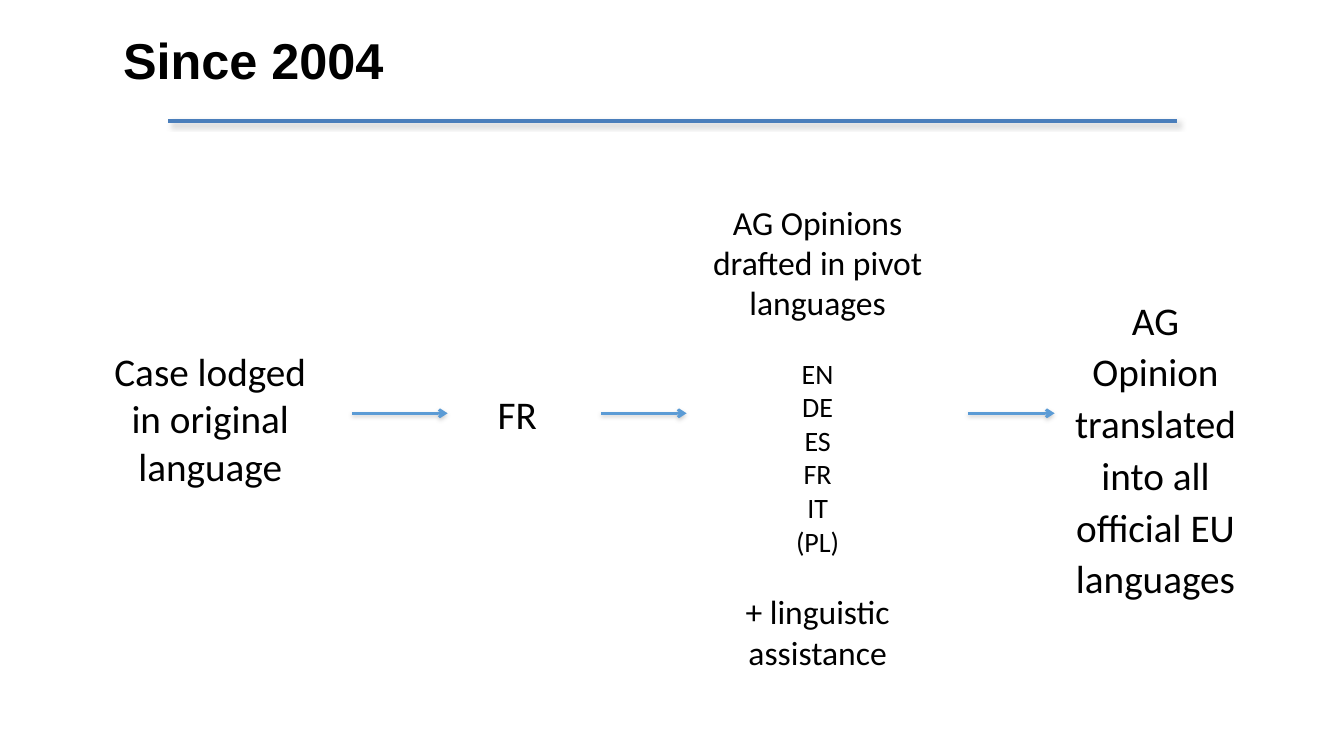
"""Builds a slide on how Advocate General Opinions are translated since 2004."""
from lxml import etree
from pptx import Presentation
from pptx import util as u
from pptx.dml.color import RGBColor
from pptx.enum import shapes, text
from pptx.oxml.ns import qn

SCALE = 9144
INK = {"text": "000000", "rule": "4A7EBB", "arrow": "5B9BD5", "shade": "808080"}
FLOW_Y = 410


def px(*vals):
    return [u.Emu(v * SCALE) for v in vals]


def place(shape, box):
    shape.left, shape.top, shape.width, shape.height = px(*box)


def style(para, size, face="Calibri", bold=False, align=text.PP_ALIGN.CENTER):
    para.alignment = align
    font = para.font
    font.name, font.size, font.bold = face, u.Pt(size), bold
    font.color.rgb = RGBColor.from_string(INK["text"])


def add_title(slide, words, box):
    title = slide.shapes.title
    place(title, box)
    frame = title.text_frame
    frame.text = words
    frame.auto_size = text.MSO_AUTO_SIZE.NONE
    frame.vertical_anchor = text.MSO_ANCHOR.TOP
    style(frame.paragraphs[0], 36, "Arial", True, text.PP_ALIGN.LEFT)


def add_text(slide, box, lines, spacing=None):
    frame = slide.shapes.add_textbox(*px(*box)).text_frame
    frame.word_wrap = True
    for i, (words, size, gap) in enumerate(lines):
        para = frame.paragraphs[0] if i == 0 else frame.add_paragraph()
        para.text = words
        para.space_before = u.Pt(gap)
        if spacing:
            para.line_spacing = spacing
        style(para, size)


def add_shade(line, alpha, blur, dist, angle):
    effects = etree.SubElement(line._element.spPr, qn("a:effectLst"))
    shade = etree.SubElement(
        effects, qn("a:outerShdw"), blurRad=str(u.Pt(blur)), dist=str(u.Pt(dist)),
        dir=str(angle * 60000), rotWithShape="0")
    color = etree.SubElement(shade, qn("a:srgbClr"), val=INK["shade"])
    etree.SubElement(color, qn("a:alpha"), val=str(alpha * 1000))


def add_line(slide, x1, x2, y, color, width, shade):
    line = slide.shapes.add_connector(
        shapes.MSO_CONNECTOR.STRAIGHT, *px(x1, y, x2, y))
    line.line.color.rgb = RGBColor.from_string(INK[color])
    line.line.width = u.Pt(width)
    add_shade(line, *shade)
    return line


def add_arrow(slide, x1, x2):
    line = add_line(slide, x1, x2, FLOW_Y, "arrow", 2, (38, 3.1, 1.6, 90))
    etree.SubElement(line.line._get_or_add_ln(), qn("a:tailEnd"), type="arrow")


def main():
    deck = Presentation()
    deck.slide_width, deck.slide_height = px(1333, 750)
    slide = deck.slides.add_slide(deck.slide_layouts[5])

    add_title(slide, "Since 2004", (112, 24, 935, 71))
    add_line(slide, 167, 1167, 120, "rule", 2.25, (40, 4, 3, 45))

    add_text(slide, (100, 340, 217, 151),
             [("Case lodged in original language", 28, 0)])
    add_text(slide, (430, 382, 166, 57), [("FR", 28, 0)])

    pivots = ["EN", "DE", "ES", "FR", "IT", "(PL)"]
    add_text(slide, (683, 195, 256, 481), [
        ("AG Opinions drafted in pivot languages", 24, 0),
        *[(code, 20, 0 if i else 24) for i, code in enumerate(pivots)],
        ("+ linguistic assistance", 24, 24)])
    add_text(slide, (1047, 284, 198, 319),
             [("AG Opinion translated into all official EU languages", 28, 0)], 1.1)

    for x1, x2 in [(349, 444), (596, 681), (960, 1046)]:
        add_arrow(slide, x1, x2)

    deck.save("out.pptx")


if __name__ == "__main__":
    main()
